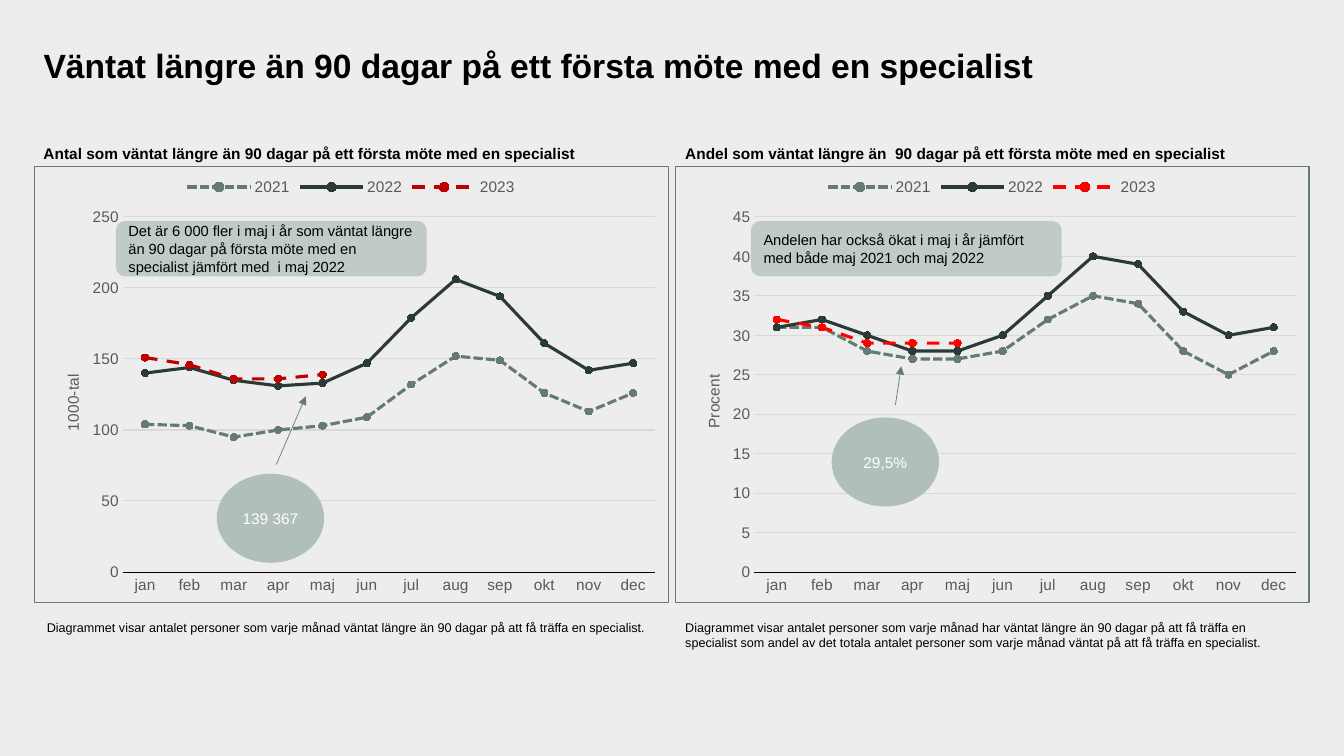
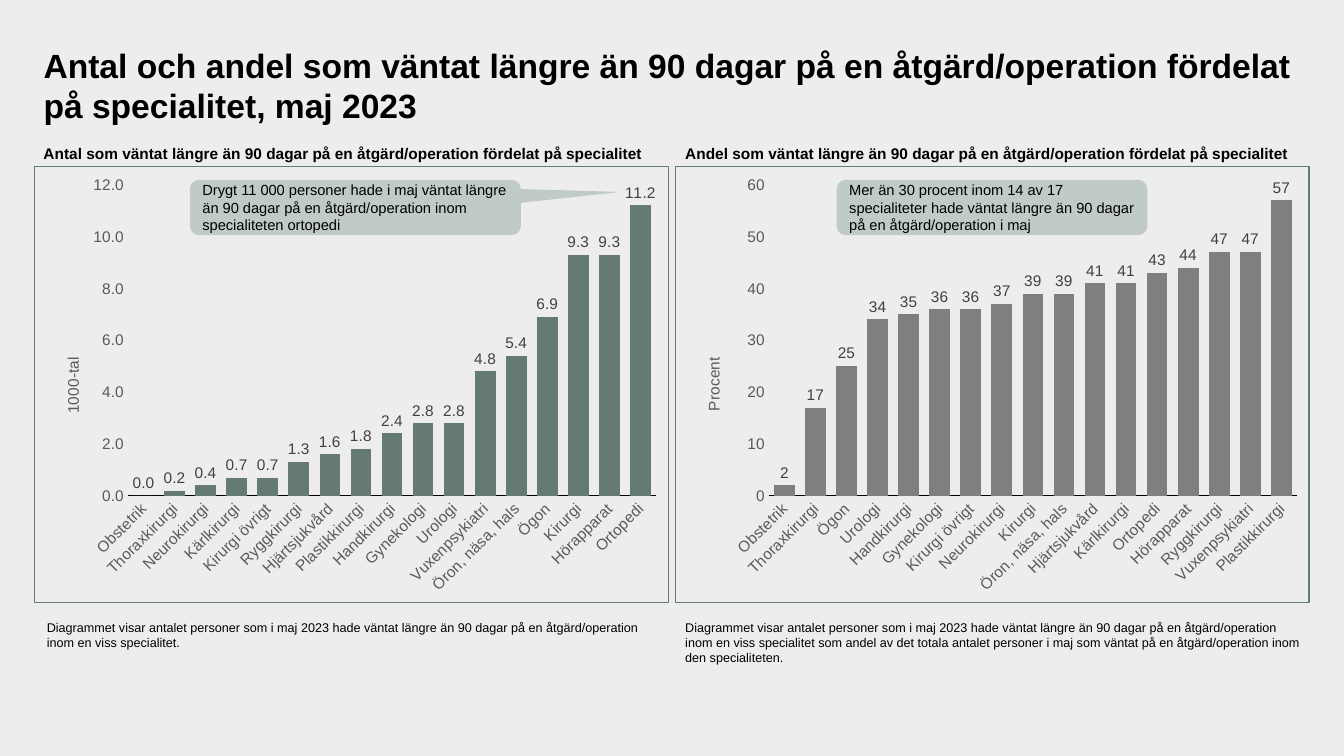
from lxml.etree import SubElement
from pptx import Presentation
from pptx.chart.data import CategoryChartData
from pptx.dml.color import RGBColor
from pptx.enum.chart import XL_CHART_TYPE, XL_LABEL_POSITION, XL_LEGEND_POSITION
from pptx.enum.chart import XL_MARKER_STYLE, XL_TICK_MARK
from pptx.enum.dml import MSO_LINE
from pptx.enum.shapes import MSO_CONNECTOR, MSO_SHAPE
from pptx.enum.text import MSO_ANCHOR, PP_ALIGN
from pptx.oxml import parse_xml
from pptx.oxml.ns import nsdecls, qn
from pptx.util import Emu, Inches, Pt

COLUMNS, ROWS = 160, 90
WIDTH, HEIGHT = Inches(40 / 3), Inches(7.5)
FONT = "Arial"
BLACK, WHITE, GREY, DARK_GREY = "000000", "FFFFFF", "595959", "404040"
GREEN, DARK_GREEN, RED, DARK_RED = "657B71", "2A3B36", "FF0000", "C00000"
BACKDROP, CALLOUT, BUBBLE, GRID, BAR_GREY = "EDEDED", "C0CBC6", "B0BFB7", "D9D9D9", "7F7F7F"
LEFT, RIGHT, PANEL_WIDTH = 4, 80.3, 75.6
CHART_TOP, CHART_HEIGHT = 19.8, 52
MONTHS = ["jan", "feb", "mar", "apr", "maj", "jun", "jul", "aug", "sep", "okt", "nov", "dec"]


def color(value):
    """Turn a hex string into a colour."""
    return RGBColor.from_string(value)


def across(columns):
    """Length of a number of grid columns."""
    return Emu(round(WIDTH * columns / COLUMNS))


def down(rows):
    """Length of a number of grid rows."""
    return Emu(round(HEIGHT * rows / ROWS))


def area(left, top, width, height):
    """Position and size of a grid area."""
    return across(left), down(top), across(width), down(height)


def style_font(font, size, shade, bold=False):
    """Set typeface, size, colour and weight."""
    font.name, font.size, font.bold = FONT, Pt(size), bold
    font.color.rgb = color(shade)


def style_line(line, shade, width, dash=None):
    """Set colour, width and dash of a line."""
    line.color.rgb = color(shade)
    line.width = Pt(width)
    if dash:
        line.dash_style = dash


def write(frame, text, size, shade=BLACK, bold=False, align=PP_ALIGN.LEFT):
    """Write one wrapped paragraph and return it."""
    frame.word_wrap = True
    para = frame.paragraphs[0]
    para.alignment = align
    span = para.add_run()
    span.text = text
    style_font(span.font, size, shade, bold)
    return para


def add_text(page, place, text, size, bold=False):
    """Add a text box and return its paragraph."""
    box = page.shapes.add_textbox(*area(*place))
    return write(box.text_frame, text, size, bold=bold)


def add_filled(page, preset, place, fill):
    """Add a flat shape without outline."""
    shape = page.shapes.add_shape(preset, *area(*place))
    shape.shadow.inherit = False
    shape.fill.solid()
    shape.fill.fore_color.rgb = color(fill)
    shape.line.fill.background()
    shape.text_frame.vertical_anchor = MSO_ANCHOR.MIDDLE
    return shape


def add_callout(page, left, top, text, pointer, width=37):
    """Add a rounded callout with its pointer offset."""
    shape = add_filled(page, MSO_SHAPE.ROUNDED_RECTANGULAR_CALLOUT, (left, top, width, 6.6), CALLOUT)
    for index, value in enumerate((*pointer, 0.167)):
        shape.adjustments[index] = value
    write(shape.text_frame, text, 10.5)


def add_bubble(page, left, top, text):
    """Add an oval with a key figure."""
    shape = add_filled(page, MSO_SHAPE.OVAL, (left, top, 12.8, 10.6), BUBBLE)
    write(shape.text_frame, text, 11, WHITE, align=PP_ALIGN.CENTER)


def add_arrow(page, start, end):
    """Add a thin arrow between two grid points."""
    arrow = page.shapes.add_connector(
        MSO_CONNECTOR.STRAIGHT, across(start[0]), down(start[1]), across(end[0]), down(end[1]))
    style_line(arrow.line, GREEN, 0.5)
    SubElement(arrow.line._get_or_add_ln(), qn("a:tailEnd"), type="triangle")
    SubElement(arrow._element.spPr, qn("a:effectLst"))


def set_layout(parent, index, inner=False, **shares):
    """Fix the place of a chart part as shares of the chart."""
    layout = parent.find(qn("c:layout"))
    if layout is None:
        layout = parse_xml(f"<c:layout {nsdecls('c')}/>")
        parent.insert(index, layout)
    manual = SubElement(layout, qn("c:manualLayout"))
    if inner:
        SubElement(manual, qn("c:layoutTarget"), val="inner")
    for mode in ("xMode", "yMode"):
        SubElement(manual, qn(f"c:{mode}"), val="edge")
    for name, share in shares.items():
        SubElement(manual, qn(f"c:{name}"), val=str(share))


def frame_chart(chart):
    """Give the chart a thin border and no fill."""
    border = parse_xml(
        f"<c:spPr {nsdecls('c', 'a')}><a:noFill/><a:ln w=\"9525\"><a:solidFill>"
        f"<a:srgbClr val=\"{GREEN}\"/></a:solidFill></a:ln></c:spPr>")
    chart._chartSpace.find(qn("c:chart")).addnext(border)


def style_axes(chart, unit, unit_top, maximum, step, number_format):
    """Style both axes and title the value axis."""
    category, value = chart.category_axis, chart.value_axis
    for axis in (category, value):
        axis.major_tick_mark = axis.minor_tick_mark = XL_TICK_MARK.NONE
        style_font(axis.tick_labels.font, 11, GREY)
    style_line(category.format.line, BLACK, 0.75)
    value.format.line.fill.background()
    value.minimum_scale, value.maximum_scale, value.major_unit = 0, maximum, step
    value.tick_labels.number_format = number_format
    value.tick_labels.number_format_is_linked = False
    frame = value.axis_title.text_frame
    span = frame.paragraphs[0].add_run()
    span.text = unit
    style_font(span.font, 11, GREY)
    frame._txBody.bodyPr.set("rot", "-5400000")
    set_layout(value.axis_title._element, 1, x=0.04, y=unit_top)


def add_chart(page, left, kind, categories, series, plot_area, **axes):
    """Add a framed chart and return it."""
    data = CategoryChartData()
    data.categories = categories
    for name, values in series:
        data.add_series(name, values)
    place = area(left, CHART_TOP, PANEL_WIDTH, CHART_HEIGHT)
    chart = page.shapes.add_chart(kind, *place, data).chart
    style_font(chart.font, 11, BLACK)
    chart.has_title = chart.has_legend = False
    frame_chart(chart)
    style_axes(chart, **axes)
    set_layout(chart._chartSpace.chart.plotArea, 0, True, **dict(zip("xywh", plot_area)))
    return chart


def add_line_chart(page, left, years, latest_shade, x, w, **axes):
    """Add a line per year over the months."""
    series = zip(("2021", "2022", "2023"), years)
    chart = add_chart(page, left, XL_CHART_TYPE.LINE_MARKERS, MONTHS, series,
                      (x, 0.115, w, 0.815), unit_top=0.47, **axes)
    style_line(chart.value_axis.major_gridlines.format.line, GRID, 0.75)
    chart.has_legend = True
    chart.legend.position = XL_LEGEND_POSITION.TOP
    chart.legend.include_in_layout = False
    style_font(chart.legend.font, 11, GREY)
    looks = ((GREEN, MSO_LINE.SQUARE_DOT), (DARK_GREEN, None), (latest_shade, MSO_LINE.DASH))
    for line, (shade, dash) in zip(chart.plots[0].series, looks):
        line.smooth = False
        style_line(line.format.line, shade, 2.25, dash)
        line.marker.style, line.marker.size = XL_MARKER_STYLE.CIRCLE, 5
        line.marker.format.fill.solid()
        line.marker.format.fill.fore_color.rgb = color(shade)
        style_line(line.marker.format.line, shade, 0.75)


def add_column_chart(page, left, bars, shade, label_format, **axes):
    """Add labelled columns, one per specialty."""
    chart = add_chart(page, left, XL_CHART_TYPE.COLUMN_CLUSTERED, list(bars),
                      [("Series 1", list(bars.values()))],
                      (0.148, 0.041, 0.833, 0.714), unit_top=0.43, **axes)
    chart.value_axis.has_major_gridlines = False
    chart.category_axis._element.txPr.bodyPr.set("rot", "-2700000")
    plot = chart.plots[0]
    plot.gap_width, plot.overlap, plot.vary_by_categories = 50, -27, False
    fill = plot.series[0].format.fill
    fill.solid()
    fill.fore_color.rgb = color(shade)
    plot.has_data_labels = True
    labels = plot.data_labels
    labels.show_value, labels.position = True, XL_LABEL_POSITION.OUTSIDE_END
    labels.number_format, labels.number_format_is_linked = label_format, False
    style_font(labels.font, 11, DARK_GREY)


def add_page(deck, title, headings, notes):
    """Add a page with title, two chart headings and two notes."""
    page = deck.slides.add_slide(deck.slide_layouts[6])
    add_text(page, (LEFT, 4.7, 151.8, 6), title, 24, True)
    for left, heading in zip((LEFT, 80.4), headings):
        add_text(page, (left, 16.6, PANEL_WIDTH, 3.5), heading, 11, True)
    for left, note in zip((4.4, 80.4), notes):
        add_text(page, (left, 73.2, PANEL_WIDTH, 4.8), note, 9).space_after = Pt(8)
    return page


def add_first_meeting(deck):
    """Add the page on waiting for a first meeting."""
    page = add_page(
        deck, "Väntat längre än 90 dagar på ett första möte med en specialist",
        ("Antal som väntat längre än 90 dagar på ett första möte med en specialist",
         "Andel som väntat längre än  90 dagar på ett första möte med en specialist"),
        ("Diagrammet visar antalet personer som varje månad väntat längre än 90 dagar på att få "
         "träffa en specialist.",
         "Diagrammet visar antalet personer som varje månad har väntat längre än 90 dagar på att få "
         "träffa en specialist som andel av det totala antalet personer som varje månad väntat på "
         "att få träffa en specialist."))
    counts = ([104, 103, 95, 100, 103, 109, 132, 152, 149, 126, 113, 126],
              [140, 144, 135, 131, 133, 147, 179, 206, 194, 161, 142, 147],
              [151, 146, 136, 136, 139] + [None] * 7)
    shares = ([31, 31, 28, 27, 27, 28, 32, 35, 34, 28, 25, 28],
              [31, 32, 30, 28, 28, 30, 35, 40, 39, 33, 30, 31],
              [32, 31, 29, 29, 29] + [None] * 7)
    add_line_chart(page, LEFT, counts, DARK_RED, 0.14, 0.84,
                   unit="1000-tal", maximum=250, step=50, number_format="#,##0")
    add_line_chart(page, RIGHT, shares, RED, 0.125, 0.855,
                   unit="Procent", maximum=45, step=5, number_format="0")
    add_callout(page, 13.8, 26.3, "Det är 6 000 fler i maj i år som väntat längre än 90 dagar på "
                "första möte med en specialist jämfört med  i maj 2022", (-0.175, 0.5))
    add_callout(page, 89.4, 26.3, "Andelen har också ökat i maj i år jämfört med både maj 2021 "
                "och maj 2022", (-0.18, 0.5))
    add_arrow(page, (32.9, 55.3), (36.4, 47.2))
    add_arrow(page, (106.6, 48.2), (107.3, 43.6))
    add_bubble(page, 25.8, 56.4, "139 367")
    add_bubble(page, 99, 49.7, "29,5%")


def add_specialties(deck):
    """Add the page on waiting for surgery by specialty."""
    page = add_page(
        deck, "Antal och andel som väntat längre än 90 dagar på en åtgärd/operation fördelat på "
        "specialitet, maj 2023",
        ("Antal som väntat längre än 90 dagar på en åtgärd/operation fördelat på specialitet",
         "Andel som väntat längre än 90 dagar på en åtgärd/operation fördelat på specialitet"),
        ("Diagrammet visar antalet personer som i maj 2023 hade väntat längre än 90 dagar på en "
         "åtgärd/operation inom en viss specialitet.",
         "Diagrammet visar antalet personer som i maj 2023 hade väntat längre än 90 dagar på en "
         "åtgärd/operation inom en viss specialitet som andel av det totala antalet personer i maj "
         "som väntat på en åtgärd/operation inom den specialiteten."))
    counts = {"Obstetrik": 0, "Thoraxkirurgi": 0.2, "Neurokirurgi": 0.4, "Kärlkirurgi": 0.7,
              "Kirurgi övrigt": 0.7, "Ryggkirurgi": 1.3, "Hjärtsjukvård": 1.6,
              "Plastikkirurgi": 1.8, "Handkirurgi": 2.4, "Gynekologi": 2.8, "Urologi": 2.8,
              "Vuxenpsykiatri": 4.8, "Öron, näsa, hals": 5.4, "Ögon": 6.9, "Kirurgi": 9.3,
              "Hörapparat": 9.3, "Ortopedi": 11.2}
    shares = {"Obstetrik": 2, "Thoraxkirurgi": 17, "Ögon": 25, "Urologi": 34, "Handkirurgi": 35,
              "Gynekologi": 36, "Kirurgi övrigt": 36, "Neurokirurgi": 37, "Kirurgi": 39,
              "Öron, näsa, hals": 39, "Hjärtsjukvård": 41, "Kärlkirurgi": 41, "Ortopedi": 43,
              "Hörapparat": 44, "Ryggkirurgi": 47, "Vuxenpsykiatri": 47, "Plastikkirurgi": 57}
    add_column_chart(page, LEFT, counts, GREEN, "#,##0.0",
                     unit="1000-tal", maximum=12, step=2, number_format="0.0")
    add_column_chart(page, RIGHT, shares, BAR_GREY, "0",
                     unit="Procent", maximum=60, step=10, number_format="0")
    add_callout(page, 22.6, 21.4, "Drygt 11 000 personer hade i maj väntat längre än 90 dagar på "
                "en åtgärd/operation inom specialiteten ortopedi", (0.8, -0.28), 39.4)
    add_callout(page, 99.6, 21.4, "Mer än 30 procent inom 14 av 17 specialiteter hade väntat längre "
                "än 90 dagar på en åtgärd/operation i maj", (-0.14, 0.5))


def main():
    """Build and save the deck."""
    deck = Presentation()
    deck.slide_width, deck.slide_height = WIDTH, HEIGHT
    backdrop = deck.slide_master.background.fill
    backdrop.solid()
    backdrop.fore_color.rgb = color(BACKDROP)
    add_first_meeting(deck)
    add_specialties(deck)
    deck.save("out.pptx")


if __name__ == "__main__":
    main()
